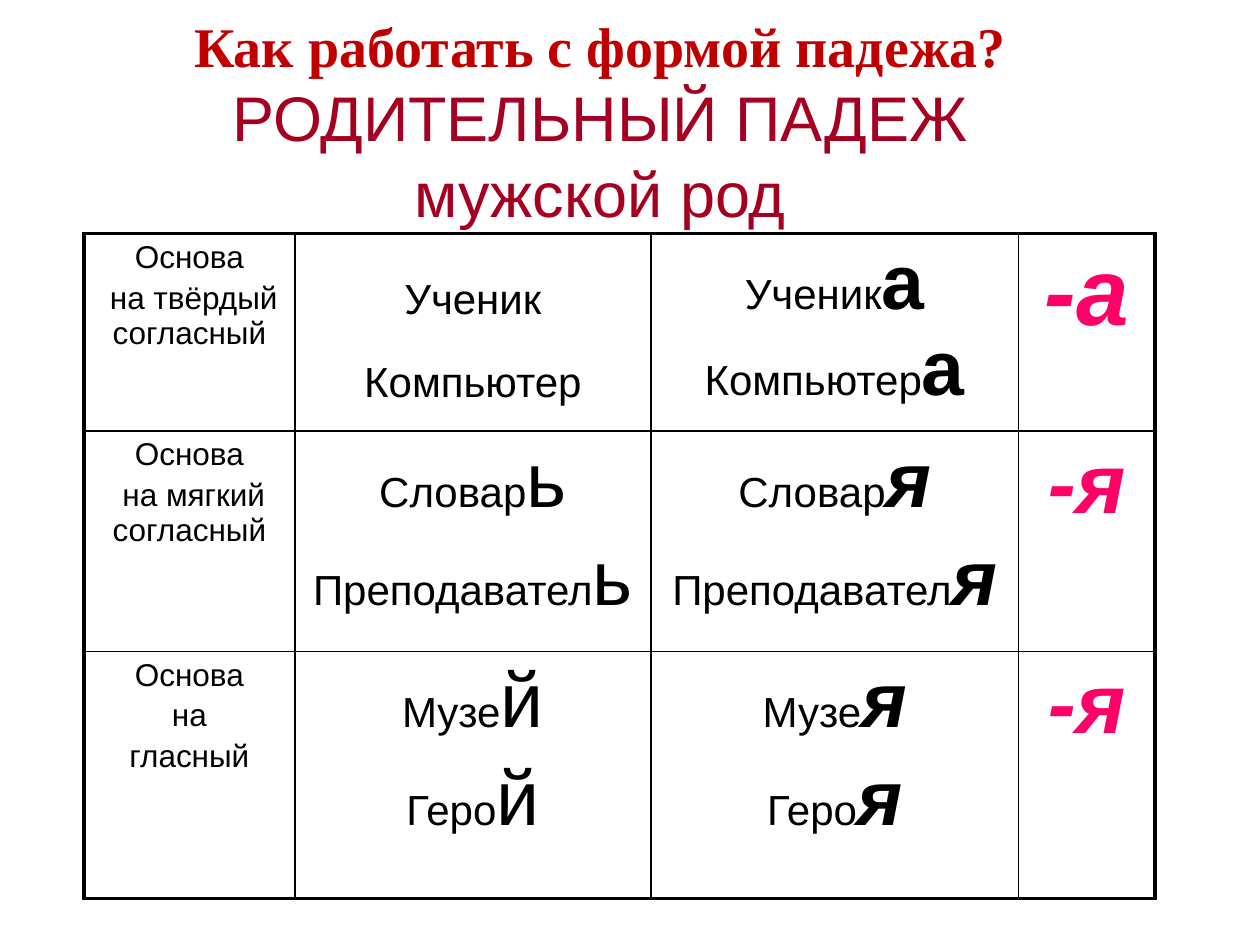
import pptx
import pptx.util
import pptx.dml.color
import pptx.enum.text
import pptx.oxml.ns
import lxml.etree

Pt = pptx.util.Pt
BLACK, PINK, RED, WINE = "000000", "FF0066", "C00000", "A50021"
WORD, END, LABEL = 24, 44, 18
THICK, THIN = 2.25, 1
COLS = (120.5, 203.5, 210, 78)
ROWS = (108, 126, 141)


def color(code):
    return pptx.dml.color.RGBColor.from_string(code)


def write(para, text, size=LABEL, font="Arial", ink=BLACK, bold=False, slant=False):
    run = para.add_run()
    run.text = text
    run.font.size = Pt(size)
    run.font.name = font
    run.font.color.rgb = color(ink)
    run.font.bold = bold
    run.font.italic = slant


def fill_text(frame, lines, gap=0):
    """Write centred paragraphs; each line is a list of (text, format) pairs."""
    for i, line in enumerate(lines):
        para = frame.add_paragraph() if i else frame.paragraphs[0]
        para.alignment = pptx.enum.text.PP_ALIGN.CENTER
        para.space_before = Pt(gap if i else 0)
        for text, form in line:
            write(para, text, **form)


def add_title(slide, left, top, width, height):
    frame = slide.shapes.add_textbox(Pt(left), Pt(top), Pt(width), Pt(height)).text_frame
    frame.word_wrap = True
    frame.vertical_anchor = pptx.enum.text.MSO_ANCHOR.MIDDLE
    main = dict(size=36, ink=WINE)
    fill_text(frame, [
        [("Как работать с формой падежа?",
          dict(size=32, font="Times New Roman", ink=RED, bold=True))],
        [("РОДИТЕЛЬНЫЙ ПАДЕЖ", main)],
        [("мужской род", main)],
    ])


def set_edge(cell, side, width):
    props = cell._tc.get_or_add_tcPr()
    name = pptx.oxml.ns.qn
    line = lxml.etree.SubElement(props, name("a:ln" + side), w=str(Pt(width)))
    solid = lxml.etree.SubElement(line, name("a:solidFill"))
    lxml.etree.SubElement(solid, name("a:srgbClr"), val=BLACK)


def frame_cell(cell, row, col):
    """Draw thick edges around the table and thin ones inside."""
    outer = {"L": col == 0, "R": col == len(COLS) - 1,
             "T": row == 0, "B": row == len(ROWS) - 1}
    for side, thick in outer.items():
        set_edge(cell, side, THICK if thick else THIN)
    cell.fill.background()


def plain(*lines, size=LABEL):
    return [[(text, dict(size=size))] for text in lines]


def ended(stems, end, **form):
    """Give each stem the same large ending."""
    return [[(stem, dict(size=WORD)), (end, dict(size=END, **form))] for stem in stems]


def mark(text, size):
    return [[(text, dict(size=size, ink=PINK, bold=True, slant=True))]]


def add_grid(slide, left, top):
    shape = slide.shapes.add_table(len(ROWS), len(COLS), Pt(left), Pt(top),
                                   Pt(sum(COLS)), Pt(sum(ROWS)))
    table = shape.table
    table.first_row = table.horz_banding = False
    for col, width in zip(table.columns, COLS):
        col.width = Pt(width)
    for row, height in zip(table.rows, ROWS):
        row.height = Pt(height)

    hard = ("Ученик", "Компьютер")
    soft = ("Словар", "Преподавател")
    vowel = ("Музе", "Геро")
    bent = dict(bold=True, slant=True)
    # Each cell holds its lines and the gap between them.
    cells = (
        ((plain("Основа", " на твёрдый согласный"), 3), (plain(*hard, size=WORD), 20.7),
         (ended(hard, "а", bold=True), 0), (mark("-а", 54), 0)),
        ((plain("Основа", " на мягкий согласный"), 3), (ended(soft, "ь"), 7),
         (ended(soft, "я", **bent), 7), (mark("-я", 48), 0)),
        ((plain("Основа", "на", "гласный"), 3), (ended(vowel, "й"), 7),
         (ended(vowel, "я", **bent), 7), (mark("-я", 48), 0)),
    )
    for r, line in enumerate(cells):
        for c, (lines, gap) in enumerate(line):
            cell = table.cell(r, c)
            fill_text(cell.text_frame, lines, gap)
            frame_cell(cell, r, c)
    table.cell(0, 1).margin_top = Pt(24.3)


def main():
    deck = pptx.Presentation()
    deck.slide_width, deck.slide_height = Pt(720), Pt(540)
    slide = deck.slides.add_slide(deck.slide_layouts[6])
    add_title(slide, 20, 0, 646, 138)
    add_grid(slide, 48, 133.5)
    deck.save("out.pptx")


if __name__ == "__main__":
    main()
